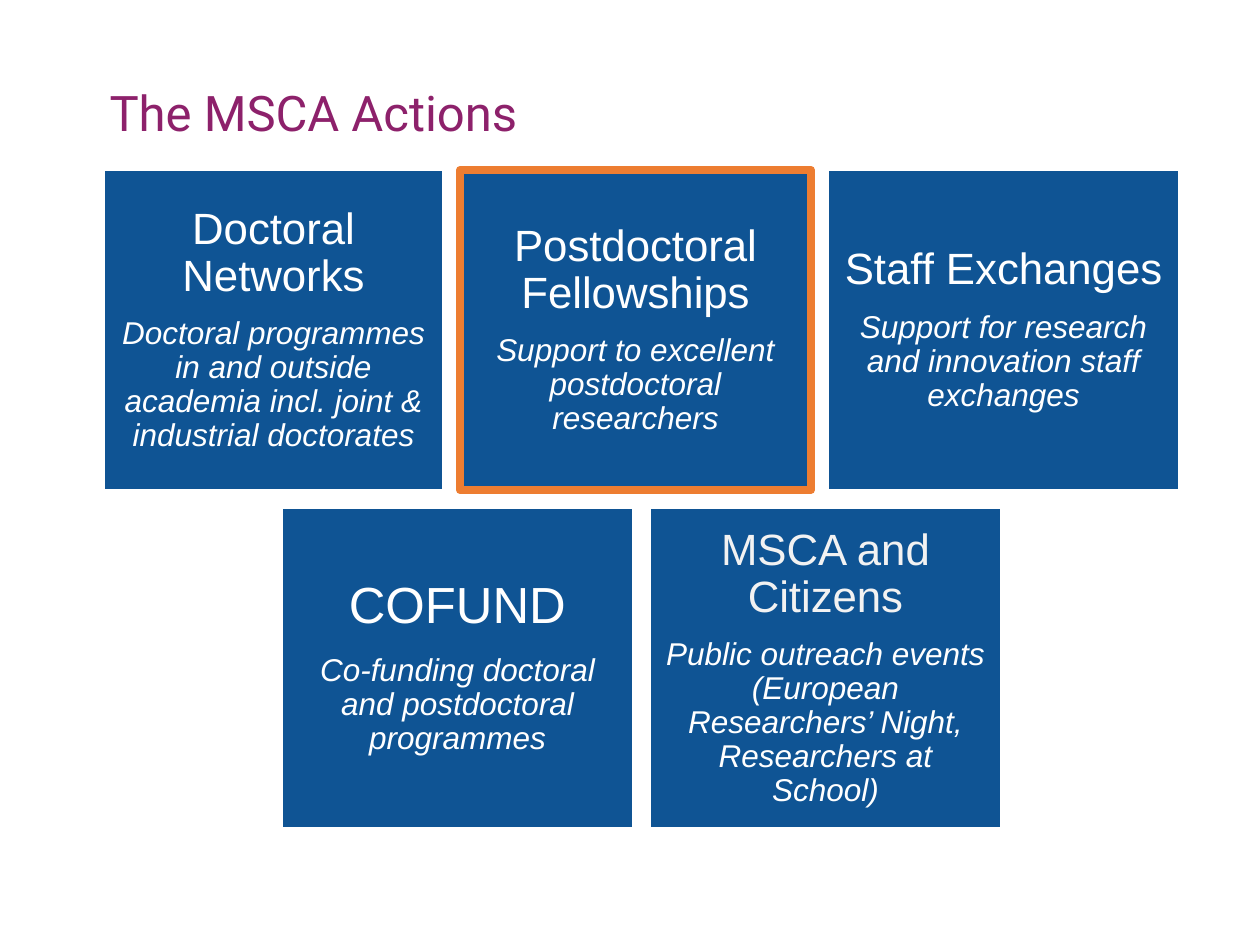
from pptx import Presentation
from pptx.dml.color import RGBColor
from pptx.enum.shapes import MSO_SHAPE
from pptx.enum.text import MSO_ANCHOR, PP_ALIGN
from pptx.util import Emu, Pt

RECT = MSO_SHAPE.RECTANGLE
MIDDLE = MSO_ANCHOR.MIDDLE
LEFT, CENTER = PP_ALIGN.LEFT, PP_ALIGN.CENTER

# Content: each row is (left, top, cards)
TITLE = "The MSCA Actions"
ROWS = [
    (104, 170, [
        dict(name="Doctoral Networks", width=339,
             text="Doctoral programmes in and outside academia incl. joint & industrial doctorates"),
        dict(name="Postdoctoral Fellowships", line="orange", line_pt=4.5,
             text="Support to excellent postdoctoral researchers"),
        dict(name="Staff Exchanges",
             text="Support for research and innovation staff exchanges"),
    ]),
    (282, 508, [
        dict(name="COFUND", size=29, inset=15,
             text="Co-funding doctoral and postdoctoral programmes"),
        dict(name="MSCA and Citizens", color="light",
             text="Public outreach events (European Researchers’ Night, Researchers at School)"),
    ]),
]
COLORS = {"purple": "8D216B", "blue": "0F5494", "orange": "ED7D31",
          "white": "FFFFFF", "light": "F2F2F2"}
CARD_W, CARD_H, GAP = 351, 320, 17


def px(n):
    return Emu(n * 914400 // 126)


def rgb(name):
    return RGBColor.from_string(COLORS[name])


def format_paragraph(p, size, color, font="Arial", align=CENTER, spacing=0.9):
    p.alignment = align
    p.line_spacing = spacing
    p.font.name = font
    p.font.size = Pt(size)
    p.font.color.rgb = rgb(color)


def add_card(slide, left, top, width, card):
    sp = slide.shapes.add_shape(RECT, px(left), px(top), px(width), px(CARD_H))
    sp.shadow.inherit = False
    sp.fill.solid()
    sp.fill.fore_color.rgb = rgb("blue")
    sp.line.color.rgb = rgb(card.get("line", "white"))
    sp.line.width = Pt(card.get("line_pt", 1))

    tf = sp.text_frame
    tf.word_wrap = True
    tf.vertical_anchor = MIDDLE
    inset = px(card.get("inset", 13))
    tf.margin_left = tf.margin_right = tf.margin_top = tf.margin_bottom = inset

    size = card.get("size", 25)
    p = tf.paragraphs[0]
    p.text = card["name"]
    format_paragraph(p, size, card.get("color", "white"))
    p.space_after = Pt(round(size * 0.385, 1))

    p = tf.add_paragraph()
    p.text = card["text"]
    format_paragraph(p, 18, "white")
    p.font.italic = True


prs = Presentation()
prs.slide_width, prs.slide_height = px(1260), px(945)
slide = prs.slides.add_slide(prs.slide_layouts[5])

# Title
title = slide.shapes.title
title.left, title.top, title.width, title.height = px(97), px(84), px(1104), px(66)
title.text_frame.vertical_anchor = MIDDLE
p = title.text_frame.paragraphs[0]
p.text = TITLE
format_paragraph(p, 28, "purple", "Roboto", LEFT, 0.8)

# Cards, placed left to right in each row
for left, top, cards in ROWS:
    for card in cards:
        width = card.get("width", CARD_W)
        add_card(slide, left, top, width, card)
        left += width + GAP

prs.save("out.pptx")
